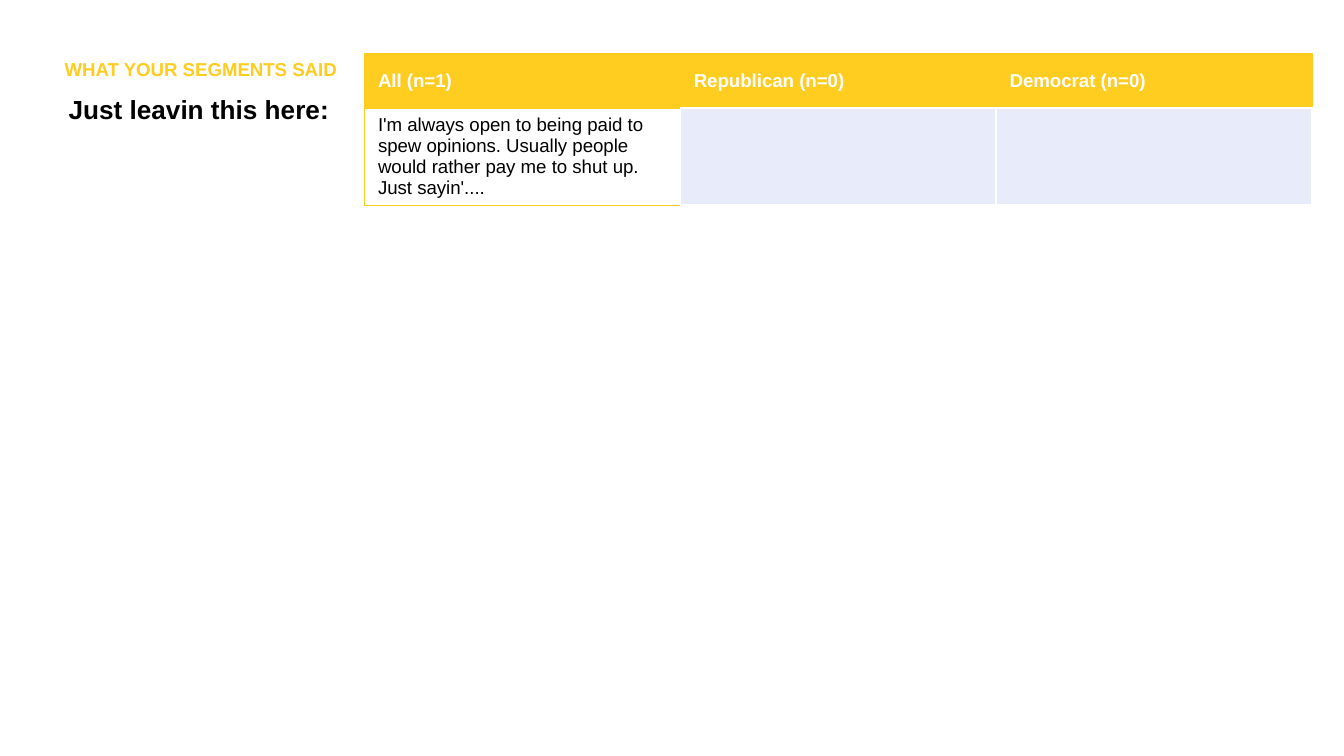
from lxml import etree
from pptx import Presentation
from pptx.dml.color import RGBColor
from pptx.enum.text import MSO_ANCHOR, MSO_AUTO_SIZE, PP_ALIGN
from pptx.oxml.ns import qn
from pptx.util import Pt

TOP, MIDDLE = MSO_ANCHOR.TOP, MSO_ANCHOR.MIDDLE
LEFT = PP_ALIGN.LEFT
FIXED = MSO_AUTO_SIZE.NONE

theme = {
    "font": "Arial",
    "gold": "FFCC20",
    "white": "FFFFFF",
    "black": "000000",
    "pale": "E7EBFA",
    "head": 14,
    "text": 10,
}


def style(para, size, color, bold):
    looks = {"name": theme["font"], "size": Pt(theme[size]), "bold": bold}
    for key, value in looks.items():
        setattr(para.font, key, value)
    para.font.color.rgb = RGBColor.from_string(theme[color])


def border(cell, color, width):
    props = cell._tc.get_or_add_tcPr()
    for side in ("a:lnL", "a:lnR", "a:lnT", "a:lnB"):
        line = etree.SubElement(props, qn(side), w=str(Pt(width)))
        fill = etree.SubElement(line, qn("a:solidFill"))
        etree.SubElement(fill, qn("a:srgbClr"), val=theme[color])


deck = Presentation()
deck.slide_width, deck.slide_height = Pt(720), Pt(405)
slide = deck.slides.add_slide(deck.slide_layouts[4])

labels = {
    1: ("Just leavin this here:", (29.5, 48.2, 165.6, 317.5), "head", "black"),
    3: ("WHAT YOUR SEGMENTS SAID", (27.4, 28.8, 167, 20.2), "text", "gold"),
}
for holder in list(slide.placeholders):
    index = holder.placeholder_format.idx
    if index not in labels:
        holder.element.getparent().remove(holder.element)
        continue
    words, box, size, color = labels[index]
    for key, value in zip(("left", "top", "width", "height"), box):
        setattr(holder, key, Pt(value))
    frame = holder.text_frame
    frame.text = words
    frame.auto_size = FIXED
    frame.vertical_anchor = TOP
    para = frame.paragraphs[0]
    looks = {"alignment": LEFT, "line_spacing": 0.9, "space_before": Pt(10)}
    for key, value in looks.items():
        setattr(para, key, value)
    style(para, size, color, True)

quote = ("I'm always open to being paid to spew opinions. "
         "Usually people would rather pay me to shut up. Just sayin'....")
rows = [
    ["All (n=1)", "Republican (n=0)", "Democrat (n=0)"],
    [quote, "", ""],
]
grid = slide.shapes.add_table(
    2, 3, Pt(195.3), Pt(28.8), Pt(507.6), Pt(58.4)).table
for r, row in enumerate(rows):
    for c, words in enumerate(row):
        cell = grid.cell(r, c)
        header = r == 0
        fill = "gold" if header else "white" if words else "pale"
        if words:
            border(cell, "gold", 0.75)
        else:
            border(cell, "white", 1)
        cell.fill.solid()
        cell.fill.fore_color.rgb = RGBColor.from_string(theme[fill])
        cell.vertical_anchor = MIDDLE
        cell.text = words
        style(cell.text_frame.paragraphs[0], "text",
              "white" if header else "black", header)

deck.save("out.pptx")
